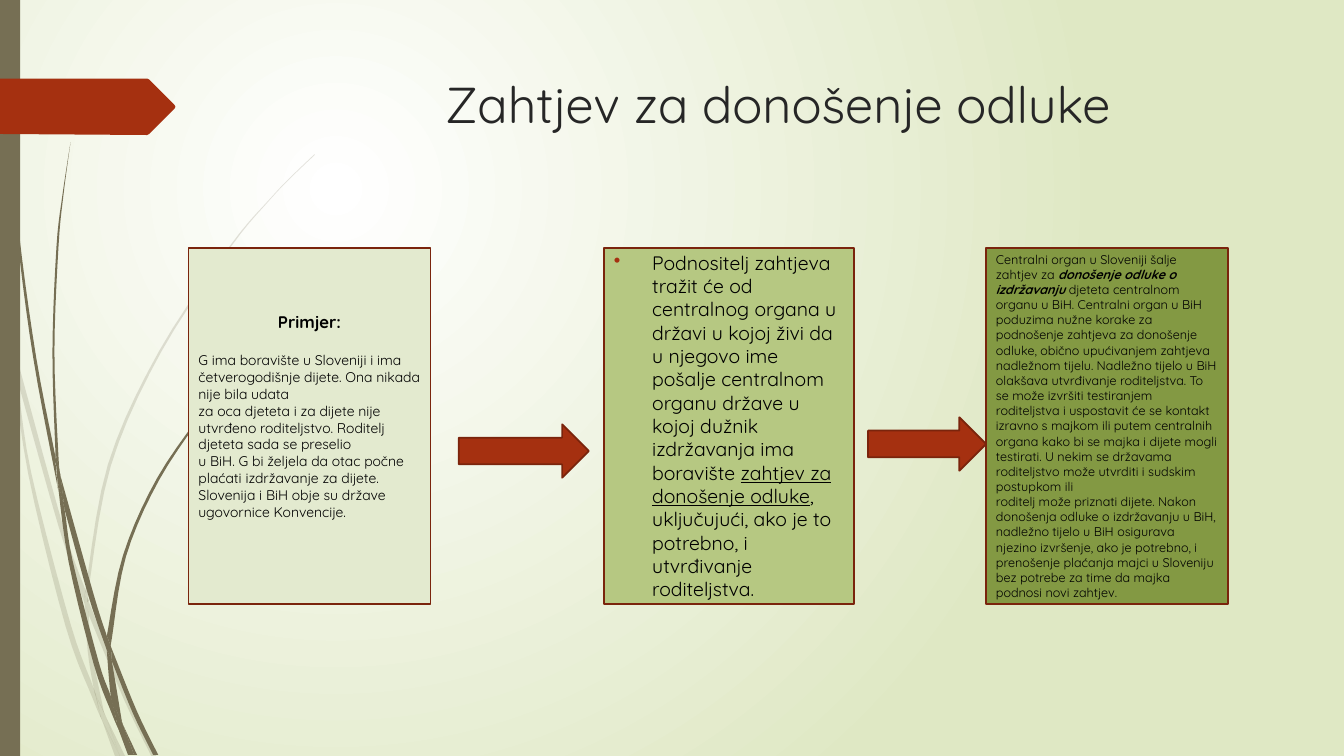
import pptx
import pptx.dml.color
import pptx.enum.shapes
import pptx.enum.text
import pptx.oxml.ns
import pptx.util
from dataclasses import dataclass
from lxml import etree
from pptx.util import Inches

qn = pptx.oxml.ns.qn
MSO_SHAPE = pptx.enum.shapes.MSO_SHAPE
PP_ALIGN = pptx.enum.text.PP_ALIGN
MSO_ANCHOR = pptx.enum.text.MSO_ANCHOR


@dataclass(frozen=True)
class Theme:
    font: str = "Quicksand"
    olive: str = "766F54"
    red: str = "A53010"
    outline: str = "7A240C"
    title_text: str = "262626"
    text: str = "000000"
    glow: str = "FFFFFF"
    backdrop: str = "DFE8C4"
    cards: tuple = ("E3EACF", "B6C882", "839943")
    title_size: float = 36
    heading_size: float = 12
    example_size: float = 10
    request_size: float = 13.9
    process_size: float = 9
    line_width: float = 1.25


THEME = Theme()

# Each grass piece is a pair of edges, down one side and back along the other
PALE_GRASS = [
    ([(0.11, 3.5), (0.09, 3.22), (0, 2.82)], [(0, 2.99), (0.1, 3.44), (0.11, 3.5)]),
    ([(0.14, 3.45), (0.62, 5.2), (0.85, 5.86)], [(0.84, 5.99), (0.58, 5.22), (0.17, 3.76)]),
    ([(0.88, 5.96), (0.92, 6.07), (1.27, 6.92), (1.55, 7.5)],
     [(1.5, 7.5), (1.23, 6.94), (0.88, 6.1)]),
    ([(1.05, 7.11), (1.24, 7.5)], [(1.19, 7.5), (1.05, 7.11)]),
    ([(0.11, 3.5), (0.17, 3.76), (0.31, 4.69), (0.7, 6.19), (0.93, 6.83), (0.99, 7.07)],
     [(1.01, 7.14), (0.92, 6.93), (0.65, 6.21), (0.28, 4.7), (0.11, 3.5)]),
    ([(0.84, 5.99), (0.87, 6.46), (0.93, 6.83), (0.96, 6.92), (1.05, 7.11)],
     [(1.03, 7.06), (0.91, 6.46), (0.88, 6.1), (0.88, 6.08)]),
    ([(0.88, 5.96), (0.88, 5.84), (1.1, 4.62), (1.6, 3.49), (2.29, 2.45), (2.68, 1.98),
      (2.9, 1.75), (3.12, 1.54)],
     [(3.12, 1.53), (2.89, 1.75), (2.68, 1.97), (2.28, 2.44), (1.58, 3.48), (1.07, 4.61),
      (0.85, 5.84), (0.85, 5.86)]),
    ([(1.01, 7.14), (1.14, 7.5)], [(1.19, 7.5), (1.01, 7.14)]),
    ([(0.88, 6.08), (0.88, 6.1), (0.88, 5.96)], [(0.85, 5.86), (0.84, 5.99)]),
    ([(0.93, 6.83), (0.99, 7.07), (1.01, 7.14), (1.19, 7.5)],
     [(1.19, 7.5), (1.05, 7.11), (0.96, 6.92)]),
]
DARK_GRASS = [
    ([(0.03, 0), (0.04, 0.48), (0.07, 1.1), (0.17, 2.33), (0.33, 3.55), (0.56, 4.77),
      (0.57, 4.81)],
     [(0.55, 4.57), (0.55, 4.53), (0.36, 3.55), (0.19, 2.32), (0.08, 1.09), (0.05, 0.48),
      (0.04, 0)]),
    ([(0.6, 4.72), (0.93, 5.9), (1.06, 6.31), (1.06, 6.33)],
     [(1.06, 6.45), (0.88, 5.92), (0.64, 5.05)]),
    ([(1.1, 6.41), (1.13, 6.49), (1.36, 7.06), (1.57, 7.49)],
     [(1.52, 7.49), (1.32, 7.08), (1.11, 6.56)]),
    ([(0.57, 4.77), (0.64, 5.05), (0.72, 5.56), (0.98, 6.57), (1.1, 6.91), (1.16, 7.17)],
     [(1.17, 7.22), (1.11, 7.08), (0.93, 6.59), (0.68, 5.57), (0.57, 4.77)]),
    ([(0.6, 4.72), (0.58, 4.53), (0.54, 3.49), (0.58, 2.45), (0.63, 1.93), (0.7, 1.41)],
     [(0.7, 1.41), (0.62, 1.93), (0.56, 2.45), (0.52, 3.49), (0.55, 4.49)]),
    ([(1.22, 7.19), (1.36, 7.49)], [(1.33, 7.49), (1.22, 7.19)]),
    ([(0.55, 4.49), (0.6, 4.72), (0.64, 5.05)], [(0.57, 4.77), (0.55, 4.53)]),
    ([(1.1, 6.41), (1.11, 6.33), (1.25, 5.52), (1.58, 4.76), (2.05, 4.06), (2.31, 3.74),
      (2.61, 3.44)],
     [(2.6, 3.44), (2.31, 3.73), (2.04, 4.05), (1.56, 4.74), (1.22, 5.51), (1.06, 6.31)]),
    ([(1.17, 7.22), (1.27, 7.49)], [(1.31, 7.49), (1.17, 7.22)]),
    ([(1.06, 6.45), (1.1, 6.91), (1.16, 7.06), (1.22, 7.19)],
     [(1.21, 7.16), (1.11, 6.56), (1.09, 6.51)]),
    ([(1.06, 6.45), (1.09, 6.51), (1.11, 6.56)], [(1.1, 6.41), (1.06, 6.31)]),
    ([(1.1, 6.91), (1.16, 7.17), (1.17, 7.22), (1.3, 7.49)],
     [(1.33, 7.49), (1.22, 7.19), (1.16, 7.06)]),
]
RIBBON = [(0, 0.78), (1.46, 0.78), (1.48, 0.79), (1.73, 1.04), (1.74, 1.06), (1.73, 1.08),
          (1.48, 1.33), (1.46, 1.34), (0, 1.33)]

# Card paragraphs: each one is a list of (text, run style names)
EXAMPLE = [
    [("Primjer:", "bold")],
    [("G ima boravište u Sloveniji i ima četverogodišnje dijete. Ona nikada nije bila udata", "")],
    [("za oca djeteta i za dijete nije utvrđeno roditeljstvo. Roditelj djeteta sada se preselio", "")],
    [("u BiH. G bi željela da otac počne plaćati izdržavanje za dijete. Slovenija i BiH obje su "
      "države ugovornice Konvencije.", "")],
]
REQUEST = [[
    ("Podnositelj zahtjeva tražit će od centralnog organa u državi u kojoj živi da u njegovo ime "
     "pošalje centralnom organu države u kojoj dužnik izdržavanja ima boravište ", ""),
    ("zahtjev za donošenje odluke", "underline"),
    (", uključujući, ako je to potrebno, i utvrđivanje roditeljstva.", ""),
]]
PROCESS = [
    [("Centralni organ u Sloveniji šalje zahtjev za ", ""),
     ("donošenje odluke o izdržavanju ", "bold italic"),
     ("djeteta centralnom organu u BiH. Centralni organ u BiH poduzima nužne korake za podnošenje "
      "zahtjeva za donošenje odluke, obično upućivanjem zahtjeva nadležnom tijelu. Nadležno tijelo "
      "u BiH olakšava utvrđivanje roditeljstva. To se može izvršiti testiranjem roditeljstva i "
      "uspostavit će se kontakt izravno s majkom ili putem centralnih organa kako bi se majka i "
      "dijete mogli testirati. U nekim se državama roditeljstvo može utvrditi i sudskim postupkom "
      "ili", "")],
    [("roditelj može priznati dijete. Nakon donošenja odluke o izdržavanju u BiH, nadležno tijelo "
      "u BiH osigurava njezino izvršenje, ako je potrebno, i prenošenje plaćanja majci u Sloveniju "
      "bez potrebe za time da majka podnosi novi zahtjev.", "")],
]


def rgb(value):
    return pptx.dml.color.RGBColor.from_string(value)


def paint(shape, fill, outline=None):
    shape.shadow.inherit = False
    shape.fill.solid()
    shape.fill.fore_color.rgb = rgb(fill)
    if outline:
        shape.line.color.rgb = rgb(outline)
        shape.line.width = pptx.util.Pt(THEME.line_width)
    else:
        shape.line.fill.background()


def paint_backdrop(page):
    fill = page.background.fill
    fill.gradient()
    for stop, color in zip(fill.gradient_stops, (THEME.glow, THEME.backdrop)):
        stop.color.rgb = rgb(color)
    gradient = page.element.find(".//" + qn("a:gradFill"))
    gradient.remove(gradient.find(qn("a:lin")))
    circle = etree.SubElement(gradient, qn("a:path"), {"path": "circle"})
    etree.SubElement(circle, qn("a:fillToRect"), l="50000", t="50000", r="100000", b="100000")


def smooth(points, steps=5):
    """Return points along a Catmull-Rom curve through the given points."""
    padded = [points[0], *points, points[-1]]
    curve = [points[0]]
    for a, b, c, d in zip(padded, padded[1:], padded[2:], padded[3:]):
        for t in (step / steps for step in range(1, steps + 1)):
            curve.append(tuple(
                q + t / 2 * (r - p + t * (2 * p - 5 * q + 4 * r - s + t * (3 * (q - r) + s - p)))
                for p, q, r, s in zip(a, b, c, d)))
    return curve


def add_outline(shapes, points, fill):
    start, *rest = [(Inches(x), Inches(y)) for x, y in points]
    builder = shapes.build_freeform(*start)
    builder.add_line_segments(rest)
    shape = builder.convert_to_shape()
    paint(shape, fill)
    return shape


def add_grass(page, pieces, opacity=100):
    group = page.shapes.add_group_shape()
    for down, back in pieces:
        blade = add_outline(group.shapes, smooth(down) + smooth(back), THEME.olive)
        if opacity < 100:
            color = blade.fill._xPr.find(".//" + qn("a:srgbClr"))
            etree.SubElement(color, qn("a:alpha"), val=str(opacity * 1000))


def add_block(page, kind, left, top, width, height, fill, outline=None):
    block = page.shapes.add_shape(kind, *map(Inches, (left, top, width, height)))
    paint(block, fill, outline)
    return block


def write(frame, paragraphs, size, color, align=PP_ALIGN.LEFT):
    frame.word_wrap = True
    for index, spans in enumerate(paragraphs):
        para = frame.paragraphs[0] if index == 0 else frame.add_paragraph()
        para.alignment = align
        para.font.name = THEME.font
        para.font.size = pptx.util.Pt(size)
        para.font.color.rgb = rgb(color)
        for text, styles in spans:
            span = para.add_run()
            span.text = text
            for style in styles.split():
                setattr(span.font, style, True)


def add_card(page, left, width, fill, paragraphs, size):
    card = add_block(page, MSO_SHAPE.RECTANGLE, left, 2.46, width, 3.53, fill, THEME.outline)
    frame = card.text_frame
    frame.vertical_anchor = MSO_ANCHOR.MIDDLE
    write(frame, paragraphs, size, THEME.text)
    return frame


def add_bullet(para, indent, color):
    properties = para._p.get_or_add_pPr()
    properties.set("marL", str(Inches(indent)))
    properties.set("indent", str(-Inches(indent)))
    bullet_color = etree.Element(qn("a:buClr"))
    etree.SubElement(bullet_color, qn("a:srgbClr"), val=color)
    bullet = etree.Element(qn("a:buChar"), char="•")
    defaults = properties.find(qn("a:defRPr"))
    defaults.addprevious(bullet_color)
    defaults.addprevious(bullet)


def main():
    deck = pptx.Presentation()
    deck.slide_width, deck.slide_height = Inches(13.33), Inches(7.5)
    page = deck.slides.add_slide(deck.slide_layouts[6])

    # Backdrop and side decoration
    paint_backdrop(page)
    add_grass(page, PALE_GRASS, opacity=20)
    add_grass(page, DARK_GRASS)
    add_block(page, MSO_SHAPE.RECTANGLE, 0, 0, 0.2, 7.5, THEME.olive)
    add_outline(page.shapes, RIBBON, THEME.red)

    # Title
    title = page.shapes.add_textbox(*map(Inches, (2.84, 0.68, 9.75, 1.4)))
    write(title.text_frame, [[("Zahtjev za donošenje odluke", "")]],
          THEME.title_size, THEME.title_text, PP_ALIGN.CENTER)

    # Three cards
    example_fill, request_fill, process_fill = THEME.cards
    example = add_card(page, 1.87, 2.4, example_fill, EXAMPLE, THEME.example_size)
    example.margin_bottom = Inches(0.25)
    heading = example.paragraphs[0]
    heading.alignment = PP_ALIGN.CENTER
    heading.font.size = pptx.util.Pt(THEME.heading_size)
    heading.space_after = pptx.util.Pt(14.4)
    request = add_card(page, 5.99, 2.48, request_fill, REQUEST, THEME.request_size)
    add_bullet(request.paragraphs[0], 0.38, THEME.red)
    add_card(page, 9.78, 2.4, process_fill, PROCESS, THEME.process_size)

    # Arrows between the cards
    for left, top, width in ((4.55, 4.21, 1.29), (8.61, 4.14, 1.17)):
        add_block(page, MSO_SHAPE.RIGHT_ARROW, left, top, width, 0.53, THEME.red, THEME.outline)

    deck.save("out.pptx")


if __name__ == "__main__":
    main()
